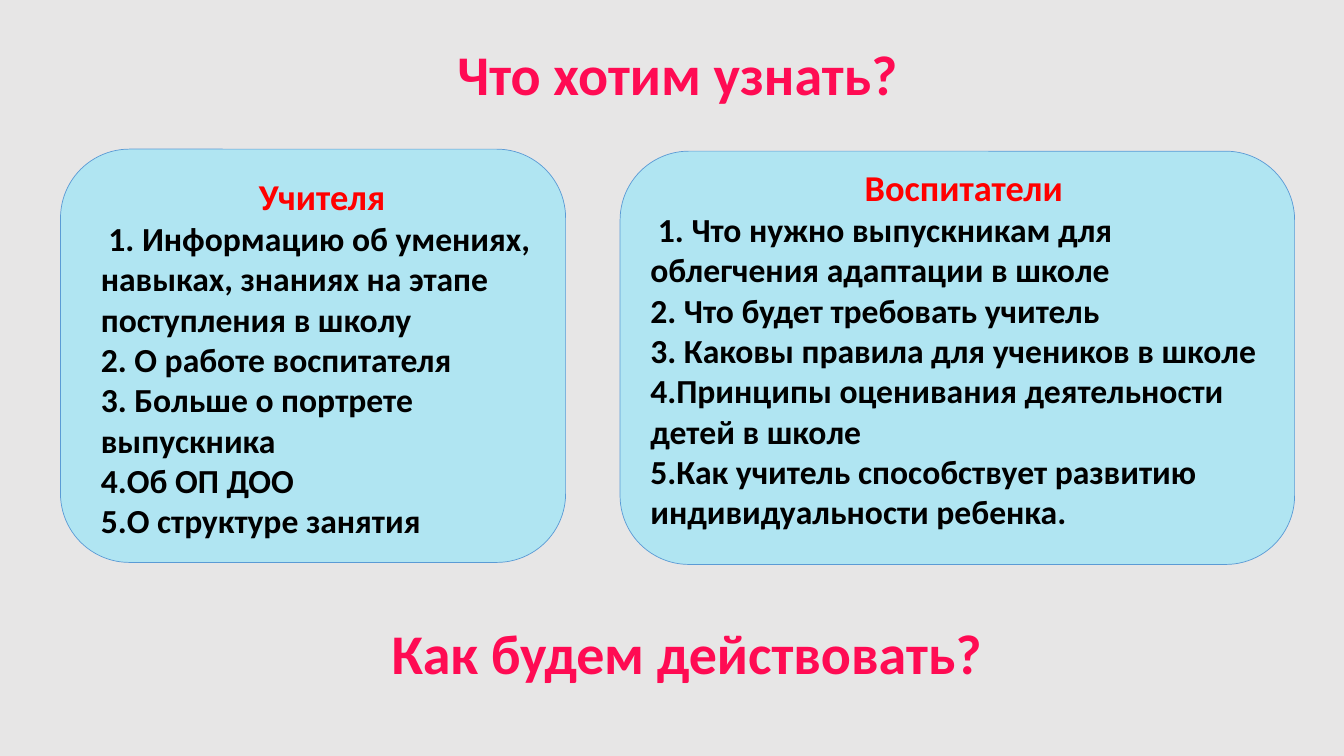
from lxml import etree
from pptx import Presentation
from pptx.dml.color import RGBColor
from pptx.enum.shapes import MSO_SHAPE
from pptx.enum.text import MSO_ANCHOR, MSO_AUTO_SIZE, PP_ALIGN
from pptx.oxml.ns import qn
from pptx.util import Inches, Pt

ROUNDED = MSO_SHAPE.ROUNDED_RECTANGLE
TOP, MIDDLE = MSO_ANCHOR.TOP, MSO_ANCHOR.MIDDLE
LEFT, CENTER = PP_ALIGN.LEFT, PP_ALIGN.CENTER
NO_AUTOFIT = MSO_AUTO_SIZE.NONE

BACKGROUND = RGBColor(0xE7, 0xE6, 0xE6)
CARD_FILL = RGBColor(0xB0, 0xE5, 0xF2)
CARD_LINE = RGBColor(0x5B, 0x9B, 0xD5)
PINK = RGBColor(0xFF, 0x0B, 0x53)
RED = RGBColor(0xFF, 0x00, 0x00)
BLACK = RGBColor(0x00, 0x00, 0x00)

FONT = "Calibri"
HEADLINE_WIDTH, HEADLINE_HEIGHT = 9.52, 0.93
CARD_HEIGHT = 4.1

TEACHERS = [
    " 1. Информацию об умениях, навыках, знаниях на этапе поступления в школу",
    "2. О работе воспитателя",
    "3. Больше о портрете выпускника",
    "4.Об ОП ДОО",
    "5.О структуре занятия",
]
EDUCATORS = [
    " 1. Что нужно выпускникам для облегчения адаптации в школе",
    "2. Что будет требовать учитель",
    "3. Каковы правила для учеников в школе",
    "4.Принципы оценивания деятельности детей в школе",
    "5.Как учитель способствует развитию индивидуальности ребенка.",
]


def place(shape, left, top, width, height):
    shape.left, shape.top = Inches(left), Inches(top)
    shape.width, shape.height = Inches(width), Inches(height)


def prepare_frame(shape, anchor):
    frame = shape.text_frame
    frame.word_wrap = True
    frame.auto_size = NO_AUTOFIT
    frame.vertical_anchor = anchor
    return frame


def write(paragraph, text, size=24, color=BLACK, align=LEFT, spacing=1.0):
    """Fill one bold, unbulleted paragraph."""
    properties = paragraph._p.get_or_add_pPr()
    properties.set("marL", "0")
    properties.set("indent", "0")
    etree.SubElement(properties, qn("a:buNone"))
    paragraph.alignment = align
    paragraph.line_spacing = spacing
    paragraph.space_before = paragraph.space_after = Pt(0)
    run = paragraph.add_run()
    run.text = text
    run.font.name = FONT
    run.font.size = Pt(size)
    run.font.bold = True
    run.font.color.rgb = color


def add_card(slide, left, top, width):
    card = slide.shapes.add_shape(
        ROUNDED, Inches(left), Inches(top), Inches(width), Inches(CARD_HEIGHT))
    card.shadow.inherit = False
    card.fill.solid()
    card.fill.fore_color.rgb = CARD_FILL
    card.line.color.rgb = CARD_LINE
    card.line.width = Pt(0.5)
    # Cards lie behind the placeholders
    slide.shapes._spTree.insert(2, card._element)


def fill_headline(shape, text, center, top):
    place(shape, center - HEADLINE_WIDTH / 2, top, HEADLINE_WIDTH, HEADLINE_HEIGHT)
    frame = prepare_frame(shape, MIDDLE)
    write(frame.paragraphs[0], text, size=40, color=PINK, align=CENTER, spacing=0.9)


def fill_list(shape, heading, items, box):
    place(shape, *box)
    frame = prepare_frame(shape, TOP)
    write(frame.paragraphs[0], heading, size=26, color=RED, align=CENTER)
    for item in items:
        write(frame.add_paragraph(), item)


def main():
    presentation = Presentation()
    presentation.slide_width = Inches(13.33)
    presentation.slide_height = Inches(7.5)
    # The "Two Content" layout gives a title and two lists
    slide = presentation.slides.add_slide(presentation.slide_layouts[3])
    slide.background.fill.solid()
    slide.background.fill.fore_color.rgb = BACKGROUND
    title, teachers, educators = slide.placeholders

    # Cards
    add_card(slide, left=0.6, top=1.48, width=5.01)
    add_card(slide, left=6.15, top=1.5, width=6.69)

    # Headlines above and below the cards
    fill_headline(title, "Что хотим узнать?", center=6.72, top=0.3)
    closing = slide.shapes.add_textbox(0, 0, 0, 0)
    fill_headline(closing, "Как будем действовать?", center=6.81, top=6.05)

    # Lists
    fill_list(teachers, "Учителя", TEACHERS, (0.9, 1.68, 4.59, 3.74))
    fill_list(educators, "Воспитатели", EDUCATORS, (6.35, 1.59, 6.42, 4.14))

    presentation.save("out.pptx")


if __name__ == "__main__":
    main()
